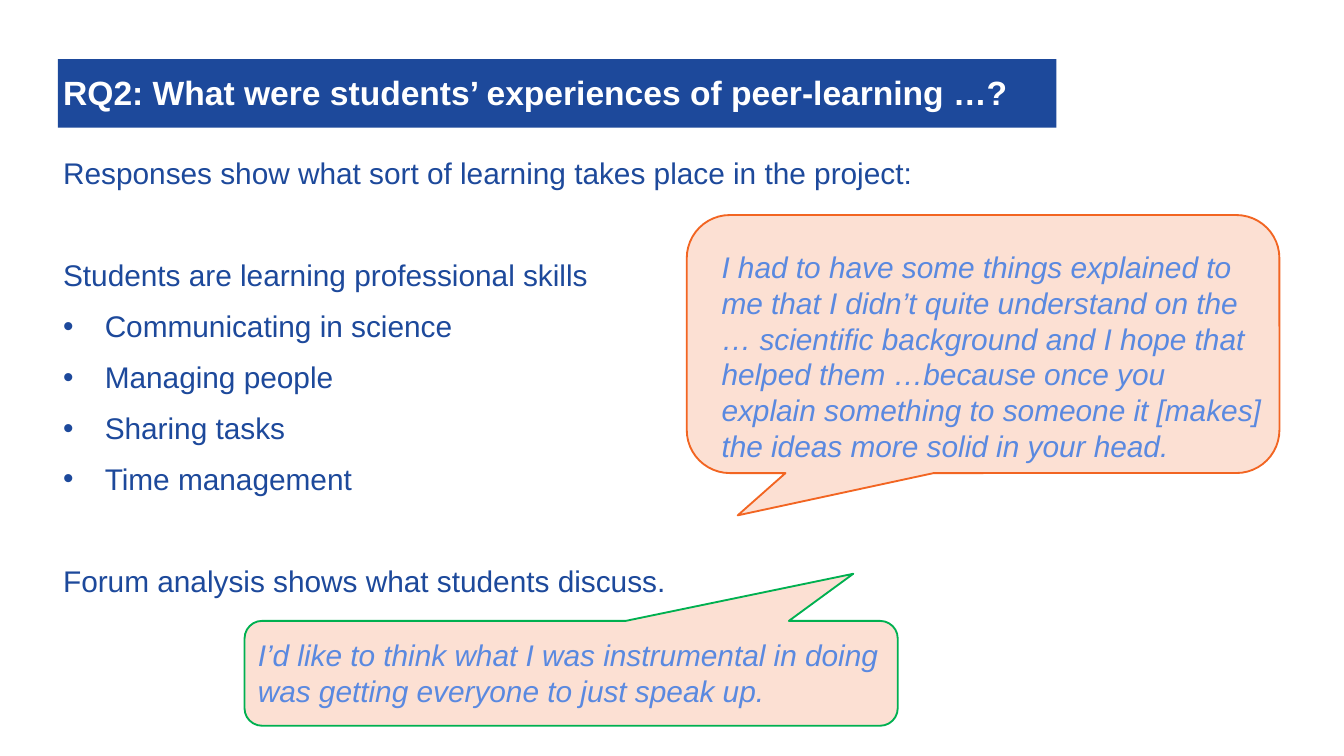
"""Build the slide on students' experiences of peer-learning."""
from lxml.etree import SubElement
from pptx import Presentation
from pptx.dml.color import RGBColor
from pptx.enum.shapes import MSO_SHAPE
from pptx.enum.text import MSO_ANCHOR, MSO_AUTO_SIZE, PP_ALIGN
from pptx.oxml.ns import qn
from pptx.util import Inches, Pt

NAVY = RGBColor(0x1D, 0x49, 0x9B)
QUOTE_BLUE = RGBColor(0x5A, 0x89, 0xE0)
PEACH = RGBColor(0xFC, 0xE0, 0xD3)
GREEN = RGBColor(0x00, 0xB0, 0x50)
ORANGE = RGBColor(0xF2, 0x65, 0x22)
WHITE = RGBColor(0xFF, 0xFF, 0xFF)


def set_font(paragraph, size, color, bold=False, italic=False):
    font = paragraph.font
    font.name = "Arial"
    font.size = Pt(size)
    font.color.rgb = color
    font.bold = bold
    font.italic = italic


def add_text_box(slide, box):
    text_frame = slide.shapes.add_textbox(*map(Inches, box)).text_frame
    text_frame.word_wrap = True
    return text_frame


presentation = Presentation()
presentation.slide_width = Inches(10)
presentation.slide_height = Inches(10 * 9 / 16)
slide = presentation.slides.add_slide(presentation.slide_layouts[5])

title = slide.shapes.title
title.left, title.top, title.width, title.height = map(Inches, (0.43, 0.44, 7.43, 0.51))
title.fill.solid()
title.fill.fore_color.rgb = NAVY
title_frame = title.text_frame
title_frame.text = "RQ2: What were students’ experiences of peer-learning …?"
title_frame.auto_size = MSO_AUTO_SIZE.NONE
title_frame.vertical_anchor = MSO_ANCHOR.MIDDLE
title_frame.margin_left, title_frame.margin_top = Inches(0.04), Inches(0.02)
title_frame.margin_right = title_frame.margin_bottom = 0
title_paragraph = title_frame.paragraphs[0]
title_paragraph.alignment = PP_ALIGN.LEFT
title_paragraph.line_spacing = 0.9
set_font(title_paragraph, 18, WHITE, bold=True)

body_frame = add_text_box(slide, (0.47, 1.18, 9.13, 4.05))
body_frame.margin_left = body_frame.margin_top = 0
body_frame.margin_right = body_frame.margin_bottom = 0
body_lines = [
    ("Responses show what sort of learning takes place in the project:", 0, False),
    ("Students are learning professional skills", 37.5, False),
    ("Communicating in science", 10, True),
    ("Managing people", 10, True),
    ("Sharing tasks", 10, True),
    ("Time management", 10, True),
    ("Forum analysis shows what students discuss.", 37.5, False),
]
for index, (text, space_before, bulleted) in enumerate(body_lines):
    paragraph = body_frame.add_paragraph() if index else body_frame.paragraphs[0]
    paragraph.text = text
    if bulleted:
        properties = paragraph._p.get_or_add_pPr()
        properties.set("marL", str(Inches(0.31)))
        properties.set("indent", str(-Inches(0.31)))
        SubElement(properties, qn("a:buFont"), typeface="Arial")
        SubElement(properties, qn("a:buChar"), char="•")
    paragraph.line_spacing = 0.9
    paragraph.space_before = Pt(space_before)
    set_font(paragraph, 16, NAVY)

quotes = [
    ((1.82, 4.62, 4.86, 0.78), (0.432, -0.95, 0.167), GREEN, (1.82, 4.69, 5, 0.64),
     "I’d like to think what I was instrumental in doing was getting everyone "
     "to just speak up."),
    ((5.11, 1.6, 4.41, 1.92), (-0.414, 0.664, 0.167), ORANGE, (5.27, 1.8, 4.25, 1.72),
     "I had to have some things explained to me that I didn’t quite understand "
     "on the … scientific background and I hope that helped them …because once "
     "you explain something to someone it [makes] the ideas more solid in your head."),
]
for callout_box, adjustments, line_color, text_box, text in quotes:
    callout = slide.shapes.add_shape(
        MSO_SHAPE.ROUNDED_RECTANGULAR_CALLOUT, *map(Inches, callout_box))
    for index, value in enumerate(adjustments):
        callout.adjustments[index] = value
    callout.shadow.inherit = False
    callout.fill.solid()
    callout.fill.fore_color.rgb = PEACH
    callout.line.color.rgb = line_color
    callout.line.width = Pt(1)
    quote_frame = add_text_box(slide, text_box)
    quote_frame.text = text
    set_font(quote_frame.paragraphs[0], 16, QUOTE_BLUE, italic=True)

presentation.save("out.pptx")
